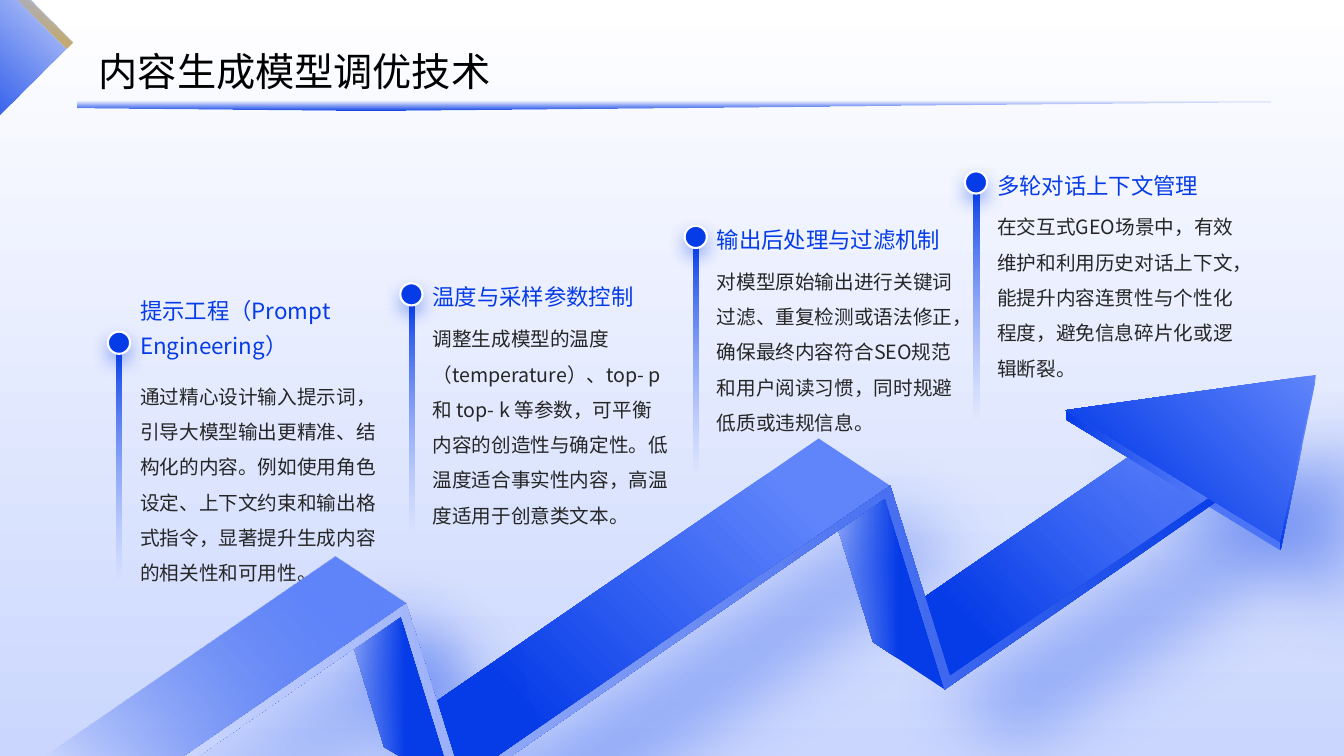
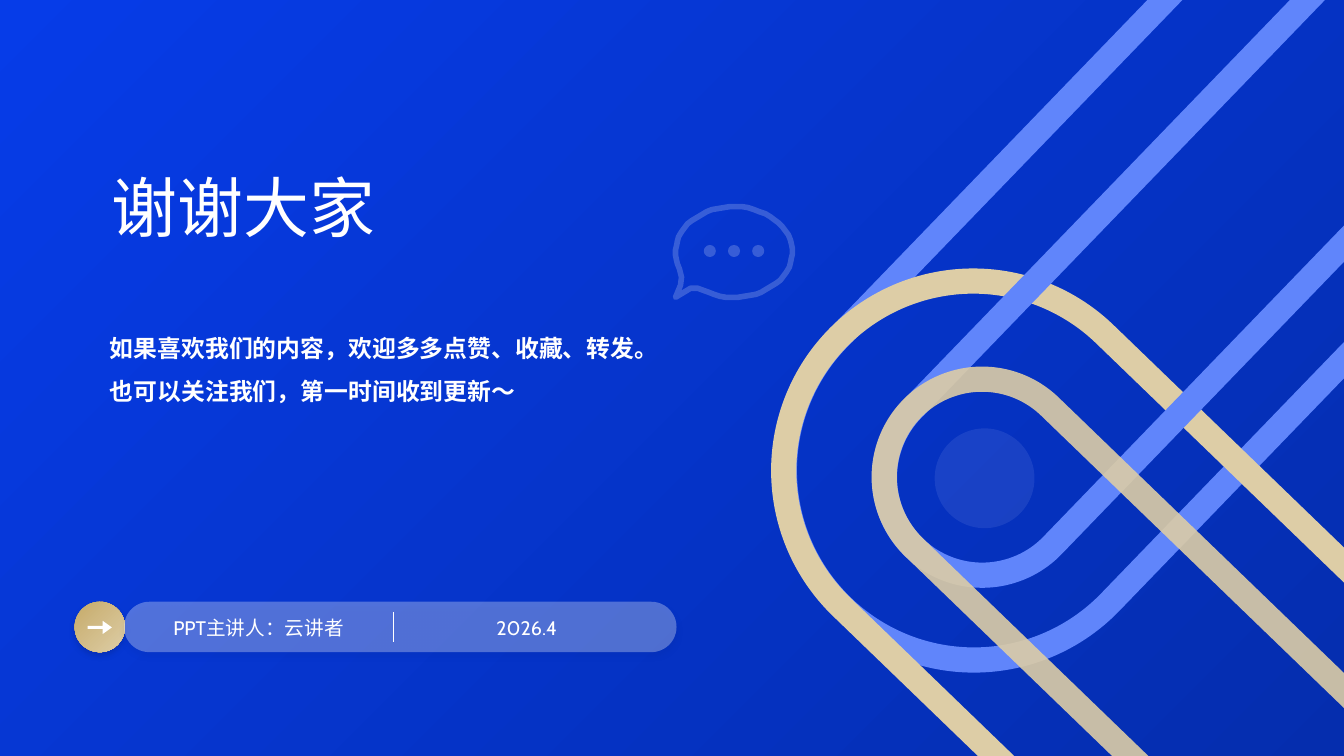
import math

import lxml.etree
import pptx
import pptx.dml.color
import pptx.enum.shapes
import pptx.enum.text
import pptx.oxml.ns
import pptx.util

RGBColor = pptx.dml.color.RGBColor
SHAPE = pptx.enum.shapes.MSO_SHAPE
ALIGN = pptx.enum.text.PP_ALIGN
ANCHOR = pptx.enum.text.MSO_ANCHOR
qn = pptx.oxml.ns.qn

BLUE = RGBColor(0x06, 0x3C, 0xE8)
DEEP_BLUE = RGBColor(0x05, 0x2D, 0xAE)
SHADE_BLUE = RGBColor(0x03, 0x1E, 0x74)
SKY = RGBColor(0x60, 0x85, 0xFB)
PALE = RGBColor(0xCA, 0xD6, 0xFE)
GOLD = RGBColor(0xC6, 0xAB, 0x6A)
SAND = RGBColor(0xDD, 0xCD, 0xA6)
WHITE = RGBColor(0xFF, 0xFF, 0xFF)
BLACK = RGBColor(0, 0, 0)
INK = RGBColor(0x26, 0x26, 0x26)

EMU_PER_PX = 9144
CJK_FONT = "Noto Sans CJK SC"
LATIN_FONT = "Cabin"

RIBBON_SHADOW = (BLUE, 30, 50, 70, 45)
FOLD_SHADOW = (BLUE, 40, 50, 50, 45)
DOT_SHADOW = (BLUE, 40, 13, 6, 90)
PILL_SHADOW = (SHADE_BLUE, 25, 4, 3, 90)

TECHNIQUES = [
    (139, 329, 370, "提示工程（Prompt Engineering）",
     "通过精心设计输入提示词，引导大模型输出更精准、结构化的内容。例如使用角色设定、上下文约束和输出格式指令，显著提升生成内容的相关性和可用性。"),
    (429, 281, 313, "温度与采样参数控制",
     "调整生成模型的温度（temperature）、top- p 和 top- k 等参数，可平衡内容的创造性与确定性。低温度适合事实性内容，高温度适用于创意类文本。"),
    (711, 224, 256, "输出后处理与过滤机制",
     "对模型原始输出进行关键词过滤、重复检测或语法修正，确保最终内容符合SEO规范和用户阅读习惯，同时规避低质或违规信息。"),
    (989, 170, 202, "多轮对话上下文管理",
     "在交互式GEO场景中，有效维护和利用历史对话上下文，能提升内容连贯性与个性化程度，避免信息碎片化或逻辑断裂。"),
]

RIBBON = [
    ([[(942, 671), (871, 624), (1188, 406), (1259, 453)]],
     ((18, SKY), (79, BLUE)), 135, RIBBON_SHADOW),
    ([[(1270, 538), (1270, 546), (1057, 416), (1057, 407)]],
     ((35, SKY), (100, BLUE)), 180, None),
    ([[(937, 684), (866, 637), (807, 447), (878, 494)]],
     ((35, BLUE), (100, PALE)), 180, None),
    ([[(812, 435), (883, 482), (495, 750), (419, 750), (386, 728)]],
     ((18, SKY), (79, BLUE)), 135, RIBBON_SHADOW),
    ([[(327, 564), (398, 611), (441, 750), (396, 750), (381, 741)]],
     ((34, BLUE), (100, PALE)), 180, FOLD_SHADOW),
    ([[(332, 552), (403, 599), (184, 750), (44, 750)]],
     ((23, SKY), (100, BLUE, 0)), 135, RIBBON_SHADOW),
    ([[(403, 599), (450, 750), (441, 750), (398, 611), (197, 750), (184, 750)],
      [(1259, 453), (1261, 460), (937, 684), (878, 494), (507, 750),
       (495, 750), (883, 482), (942, 671)]],
     ((2, BLUE), (100, PALE)), 180, None),
    ([[(1057, 407), (1270, 538), (1305, 372)]],
     ((0, SKY), (79, BLUE)), 135, RIBBON_SHADOW),
    ([[(1305, 372), (1304, 382), (1270, 546), (1270, 538)]],
     ((35, SKY), (100, BLUE)), 180, None),
]

LOOPS = [
    (979, -219, 376, 955, 224, SKY, 100),
    (923, 217, 376, 781, 314, SAND, 100),
    (1054, -61, 194, 703, 224, SKY, 100),
    (1014, 318, 194, 575, 314, SAND, 90),
]


def px(length):
    return pptx.util.Emu(round(length * EMU_PER_PX))


class Deck:
    def __init__(self):
        self.prs = pptx.Presentation()
        self.prs.slide_width = px(1333)
        self.prs.slide_height = px(750)
        self.slide = None

    def new_slide(self, layout, stops, angle):
        self.slide = self.prs.slides.add_slide(self.prs.slide_layouts[layout])
        self.gradient(self.slide.background.fill, stops, angle)

    def gradient(self, fill, stops, angle):
        fill.gradient()
        fill.gradient_angle = (360 - angle) % 360
        for stop, (position, color, *_) in zip(fill.gradient_stops, stops):
            stop.position = position / 100
            stop.color.rgb = color

    def opacity(self, color_node, percent):
        if percent < 100:
            lxml.etree.SubElement(color_node, qn("a:alpha"), val=str(percent * 1000))

    def style(self, shape, fill=None, alpha=100, angle=0, line=None, shadow=None):
        sp_pr = shape.element.spPr
        if fill is None:
            shape.fill.background()
        elif isinstance(fill, RGBColor):
            shape.fill.solid()
            shape.fill.fore_color.rgb = fill
            self.opacity(sp_pr.find(qn("a:solidFill"))[0], alpha)
        else:
            self.gradient(shape.fill, fill, angle)
            for node, stop in zip(sp_pr.iter(qn("a:gs")), fill):
                self.opacity(node[0], stop[2] if len(stop) > 2 else 100)
        if line is None:
            shape.line.fill.background()
        else:
            color, width, line_alpha = line
            shape.line.color.rgb = color
            shape.line.width = pptx.util.Pt(width)
            self.opacity(next(sp_pr.find(qn("a:ln")).iter(qn("a:srgbClr"))), line_alpha)
        shape.shadow.inherit = False
        if shadow:
            color, strength, blur, distance, direction = shadow
            outer = lxml.etree.SubElement(
                sp_pr.find(qn("a:effectLst")), qn("a:outerShdw"),
                blurRad=str(pptx.util.Pt(blur)), dist=str(pptx.util.Pt(distance)),
                dir=str(direction * 60000), algn="ctr", rotWithShape="0")
            tint = lxml.etree.SubElement(outer, qn("a:srgbClr"), val=str(color))
            self.opacity(tint, strength)

    def preset(self, kind, box, adjust=(), rotation=0, **look):
        shape = self.slide.shapes.add_shape(kind, *map(px, box))
        for index, value in enumerate(adjust):
            shape.adjustments[index] = value
        shape.rotation = rotation
        self.style(shape, **look)

    def outline(self, contours, rotation=0, **look):
        builder = self.slide.shapes.build_freeform(*contours[0][0], scale=EMU_PER_PX)
        for number, points in enumerate(contours):
            if number:
                builder.move_to(*points[0])
            builder.add_line_segments(points[1:], close=True)
        shape = builder.convert_to_shape()
        shape.rotation = rotation
        self.style(shape, **look)

    def set_text(self, holder, box, text, size, color, font=CJK_FONT, spacing=1.5,
                 anchor=ANCHOR.TOP, align=ALIGN.LEFT, inset=(0, 0), bold=False):
        holder.left, holder.top, holder.width, holder.height = map(px, box)
        frame = holder.text_frame
        frame.word_wrap = True
        frame.auto_size = pptx.enum.text.MSO_AUTO_SIZE.NONE
        frame.vertical_anchor = anchor
        frame.margin_left = frame.margin_right = px(inset[0])
        frame.margin_top = frame.margin_bottom = px(inset[1])
        paragraph = frame.paragraphs[0]
        paragraph.alignment = align
        paragraph.line_spacing = spacing
        paragraph.space_before = pptx.util.Pt(0)
        run = paragraph.add_run()
        run.text = text
        run.font.name = font
        run.font.size = pptx.util.Pt(size)
        run.font.bold = bold
        run.font.color.rgb = color
        for latin in holder.element.iter(qn("a:latin")):
            latin.addnext(latin.makeelement(qn("a:ea"), typeface=CJK_FONT))

    def text(self, box, *args, **kwargs):
        holder = self.slide.shapes.add_textbox(*map(px, box))
        self.set_text(holder, box, *args, **kwargs)

    def title(self, *args, **kwargs):
        self.set_text(self.slide.shapes.title, *args, anchor=ANCHOR.MIDDLE, **kwargs)

    def body(self, *args, **kwargs):
        self.set_text(self.slide.placeholders[1], *args, **kwargs)

    def rule(self, x, top, bottom, color):
        line = self.slide.shapes.add_connector(
            pptx.enum.shapes.MSO_CONNECTOR.STRAIGHT, px(x), px(top), px(x), px(bottom))
        line.line.color.rgb = color
        line.line.width = pptx.util.Pt(1)
        lxml.etree.SubElement(line.element.spPr, qn("a:effectLst"))

    def header(self, heading):
        self.title((98, 31, 974, 65), heading, 28, BLACK, spacing=1.3)
        self.outline([[(44, -45), (44, 60), (-3, 108), (-137, -27), (-137, -45)]],
                     rotation=45, fill=((0, BLUE), (100, BLUE, 0)), angle=270)
        self.preset(SHAPE.RECTANGLE, (-32, -1, 118, 9), rotation=45,
                    fill=((0, GOLD), (100, GOLD, 0)), angle=180)
        self.outline([[(77, 101), (77, 107), (385, 110), (1260, 102), (1260, 101)]],
                     fill=((0, BLUE), (100, BLUE, 0)), angle=270)

    def technique(self, left, marker_top, detail_top, heading, detail):
        self.preset(SHAPE.RECTANGLE, (left - 23, marker_top + 16, 5, 230),
                    fill=((0, BLUE), (100, SKY, 0)), angle=90)
        self.preset(SHAPE.OVAL, (left - 32, marker_top, 22, 22), fill=BLUE,
                    line=(WHITE, 1.5, 100), shadow=DOT_SHADOW)
        self.text((left, detail_top, 237, 179), detail, 14, INK)
        self.text((left, marker_top - 46, 237, 73), heading, 16, BLUE,
                  spacing=1.3, anchor=ANCHOR.BOTTOM)

    def speech_bubble(self):
        rim = [(round(728 + 58 * math.cos(math.radians(a))),
                round(250 + 45 * math.sin(math.radians(a))))
               for a in range(158, 480, 6)]
        tail = [(692, 286), (685, 286), (670, 295), (675, 283), (676, 275)]
        self.outline([rim + tail], line=(WHITE, 4, 20))
        for center in (704, 728, 752):
            self.preset(SHAPE.OVAL, (center - 6, 243, 12, 12), fill=WHITE, alpha=20)


def tuning_slide(deck):
    deck.new_slide(5, ((0, WHITE), (100, PALE)), 90)
    for technique in TECHNIQUES:
        deck.technique(*technique)
    for contours, stops, angle, shadow in RIBBON:
        deck.outline(contours, fill=stops, angle=angle, shadow=shadow)
    deck.header("内容生成模型调优技术")


def closing_slide(deck):
    deck.new_slide(0, ((0, BLUE), (100, DEEP_BLUE)), 45)
    for *box, rotation, color, alpha in LOOPS:
        deck.preset(SHAPE.ROUND_2_SAME_RECTANGLE, box, (0.5, 0), rotation,
                    line=(color, 18, alpha))
    deck.preset(SHAPE.OVAL, (927, 425, 99, 99), fill=PALE, alpha=10)
    deck.preset(SHAPE.OVAL, (74, 597, 50, 50), fill=((0, GOLD), (100, SAND)),
                angle=45, shadow=PILL_SHADOW)
    deck.preset(SHAPE.RIGHT_ARROW, (87, 616, 24, 13), (0.24, 0.7), fill=WHITE)
    deck.preset(SHAPE.ROUNDED_RECTANGLE, (123, 597, 548, 50), (0.5,),
                fill=WHITE, alpha=30, shadow=PILL_SHADOW)
    for left, label in ((153, "PPT主讲人：云讲者"), (419, "2026.4")):
        deck.text((left, 605, 207, 34), label, 14, WHITE, LATIN_FONT, 1.1,
                  ANCHOR.MIDDLE, ALIGN.CENTER, (10, 5))
    deck.rule(390, 607, 637, WHITE)
    deck.speech_bubble()
    deck.title((111, 54, 644, 294), "谢谢大家", 47, WHITE, font=LATIN_FONT, spacing=1.1)
    deck.body((99, 312, 566, 113),
              "如果喜欢我们的内容，欢迎多多点赞、收藏、转发。也可以关注我们，第一时间收到更新～",
              17, WHITE, inset=(10, 5), bold=True)


def main():
    deck = Deck()
    tuning_slide(deck)
    closing_slide(deck)
    deck.prs.save("out.pptx")


if __name__ == "__main__":
    main()
